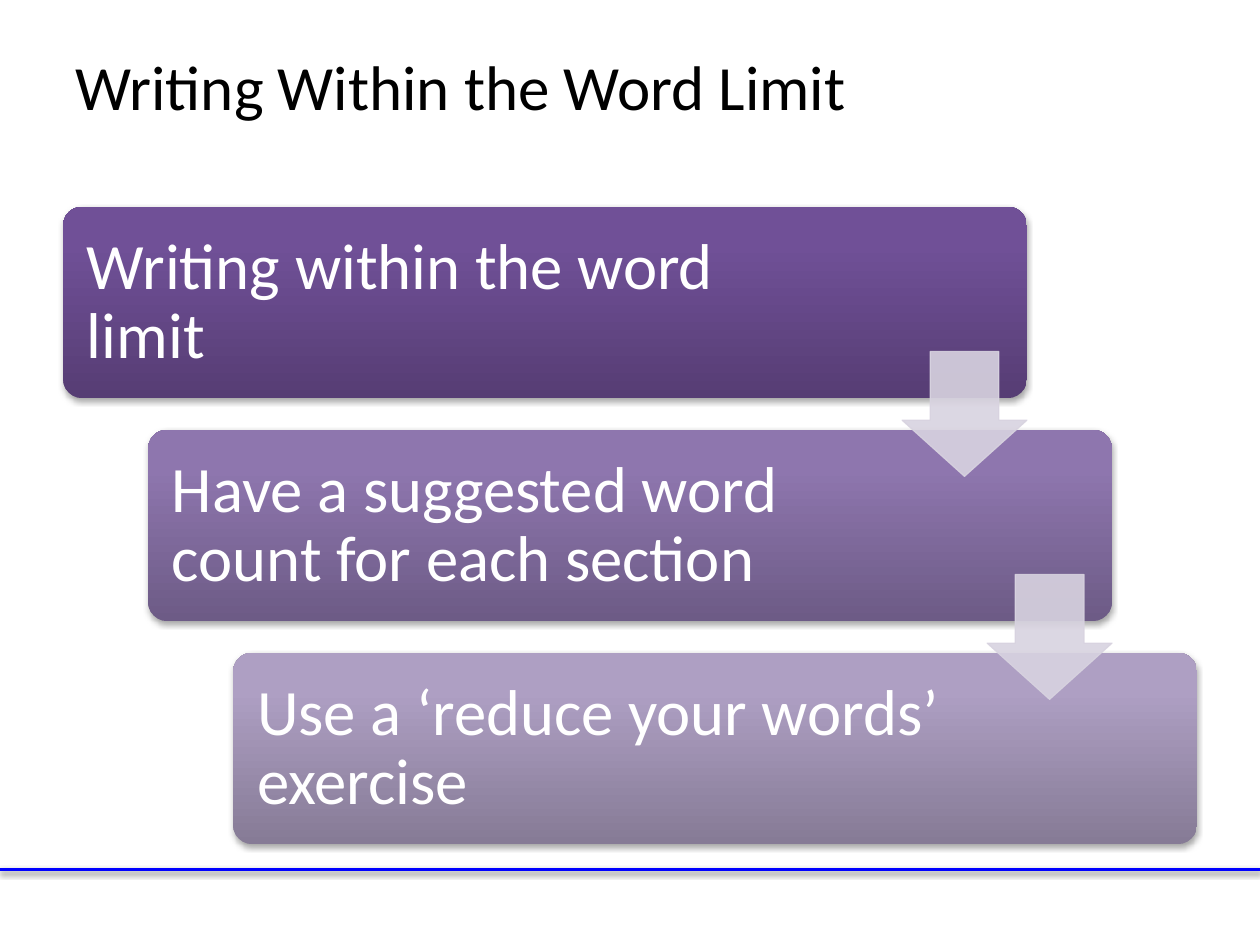
"""Build the word limit slide with three descending steps."""
from copy import deepcopy

from lxml.etree import SubElement
from pptx import Presentation
from pptx.dml.color import RGBColor
from pptx.enum.shapes import MSO_CONNECTOR as Connector
from pptx.enum.shapes import MSO_SHAPE as Shape
from pptx.enum.text import MSO_ANCHOR as Anchor
from pptx.enum.text import PP_ALIGN as Align
from pptx.oxml.ns import qn
from pptx.util import Inches, Pt

BLACK = RGBColor(0x00, 0x00, 0x00)
WHITE = RGBColor(0xFF, 0xFF, 0xFF)
BLUE = RGBColor(0x00, 0x00, 0xFF)
ARROW_COLOR = RGBColor(0xD8, 0xD3, 0xE0)
DEEP = [RGBColor.from_string(code) for code in ("563D74", "705097", "704F99")]
MEDIUM = [RGBColor.from_string(code) for code in ("6D5B86", "8E76AE", "8E75B0")]
PALE = [RGBColor.from_string(code) for code in ("867B96", "AE9FC3", "AE9FC4")]

STEPS = [
    ("Writing within the word limit", DEEP, 6.01),
    ("Have a suggested word count for each section", MEDIUM, 5.9),
    ("Use a ‘reduce your words’ exercise", PALE, 5.9),
]
LEFT, TOP = 0.5, 1.64
SHIFT_X, SHIFT_Y = 1.35 / 2, 1.77


def add_shadow(item, distance, opacity):
    """Give a shape or connector a soft shadow straight below it."""
    properties = item._element.spPr
    effects = properties.find(qn("a:effectLst"))
    if effects is None:
        effects = SubElement(properties, qn("a:effectLst"))
    shadow = SubElement(
        effects, qn("a:outerShdw"), blurRad=str(Pt(3.1)), dist=str(Pt(distance)),
        dir="5400000", rotWithShape="0",
    )
    color = SubElement(shadow, qn("a:srgbClr"), val=str(BLACK))
    SubElement(color, qn("a:alpha"), val=str(opacity * 1000))


def add_text(slide, place, text, size, color, inset, spacing):
    """Add a wrapped, vertically centred text box."""
    box = slide.shapes.add_textbox(*map(Inches, place))
    frame = box.text_frame
    frame_format = {
        "word_wrap": True,
        "vertical_anchor": Anchor.MIDDLE,
        "margin_left": Inches(inset),
        "margin_right": Inches(inset),
        "margin_top": Inches(inset),
        "margin_bottom": Inches(inset),
    }
    for name, value in frame_format.items():
        setattr(frame, name, value)
    para = frame.paragraphs[0]
    para.alignment = Align.LEFT
    para.line_spacing = spacing
    span = para.add_run()
    span.text = text
    for name, value in {"name": "Calibri", "size": Pt(size)}.items():
        setattr(span.font, name, value)
    span.font.color.rgb = color


def add_panel(slide, left, top, colors):
    """Add a rounded panel with a vertical gradient."""
    panel = slide.shapes.add_shape(
        Shape.ROUNDED_RECTANGLE, *map(Inches, (left, top, 7.65, 1.52))
    )
    panel.adjustments[0] = 0.1
    panel.line.fill.background()
    panel.fill.gradient()
    panel.fill.gradient_angle = 90
    last_stop = panel._element.spPr.findall(".//" + qn("a:gs"))[-1]
    last_stop.addnext(deepcopy(last_stop))
    for stop, position, color in zip(panel.fill.gradient_stops, (0, 0.8, 1), colors):
        stop.position = position
        stop.color.rgb = color
    panel.shadow.inherit = False
    add_shadow(panel, 1.8, 35)


def add_arrow(slide, left, top):
    """Add a slightly transparent down arrow."""
    arrow = slide.shapes.add_shape(
        Shape.DOWN_ARROW, *map(Inches, (left, top, 0.99, 0.99))
    )
    arrow.adjustments[0] = 0.55
    arrow.adjustments[1] = 0.45
    arrow.shadow.inherit = False
    arrow.line.width = Pt(0.75)
    for fill in (arrow.fill, arrow.line.fill):
        fill.solid()
        fill.fore_color.rgb = ARROW_COLOR
    for color in arrow._element.spPr.iter(qn("a:srgbClr")):
        SubElement(color, qn("a:alpha"), val="90000")


def add_rule(slide):
    """Add the blue rule across the foot of the slide."""
    rule = slide.shapes.add_connector(
        Connector.STRAIGHT, *map(Inches, (0, 6.9, 10, 6.9))
    )
    rule.line.color.rgb = BLUE
    rule.line.width = Pt(2)
    add_shadow(rule, 1.6, 38)


def main():
    """Build and save the deck."""
    deck = Presentation()
    deck.slide_width, deck.slide_height = Inches(10), Inches(7.5)
    slide = deck.slides.add_slide(deck.slide_layouts[6])
    add_rule(slide)
    add_text(slide, (0.5, 0.16, 9, 1.03), "Writing Within the Word Limit",
             36, BLACK, 0.1, 1.0)
    corners = [(LEFT + i * SHIFT_X, TOP + i * SHIFT_Y) for i in range(len(STEPS))]
    for (left, top), (text, colors, width) in zip(corners, STEPS):
        add_panel(slide, left, top, colors)
        add_text(slide, (left + 0.04, top + 0.05, width, 1.43), text,
                 37, WHITE, 0.15, 0.9)
    for left, top in corners[:-1]:
        add_arrow(slide, left + 6.66, top + 1.15)
    deck.save("out.pptx")


if __name__ == "__main__":
    main()
